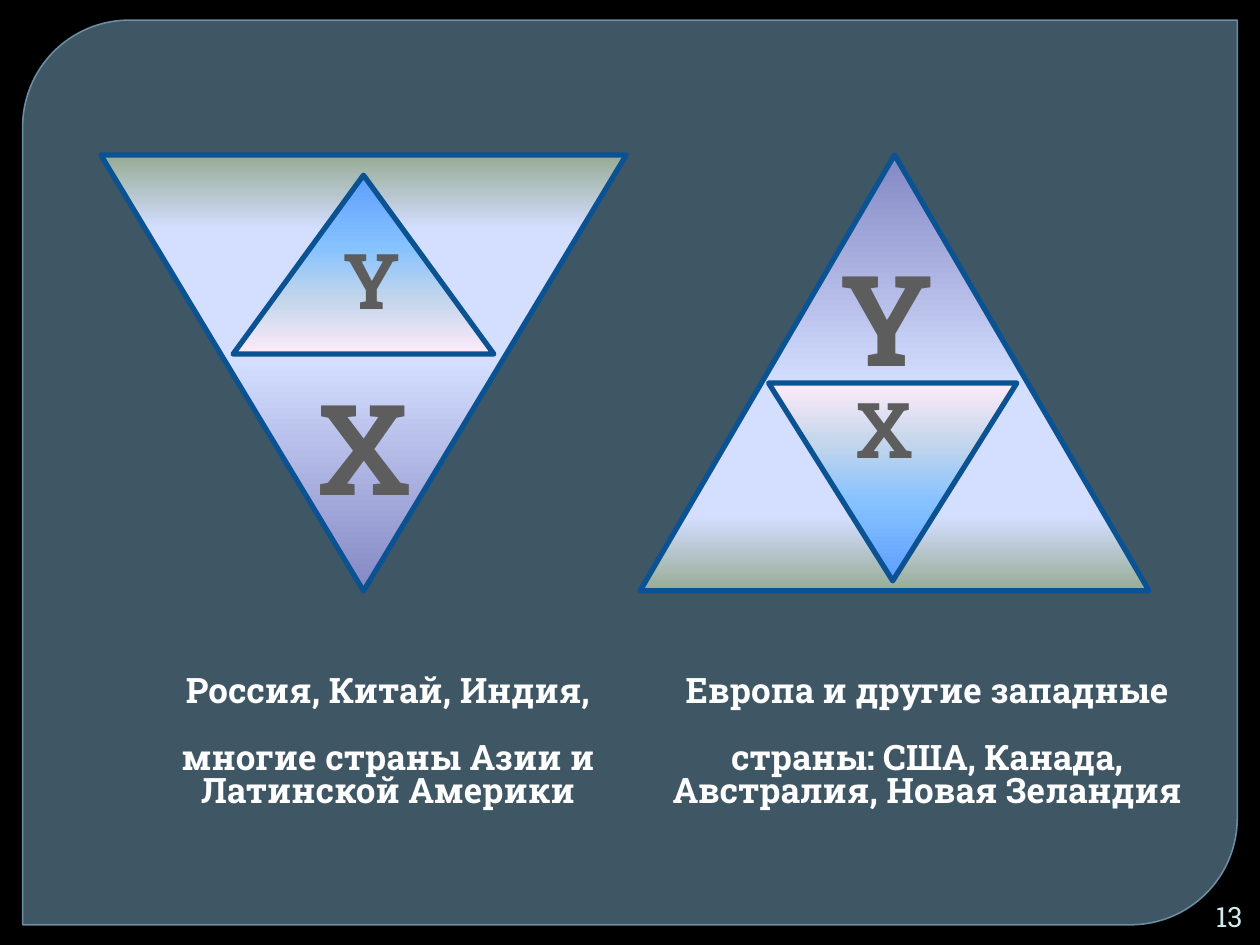
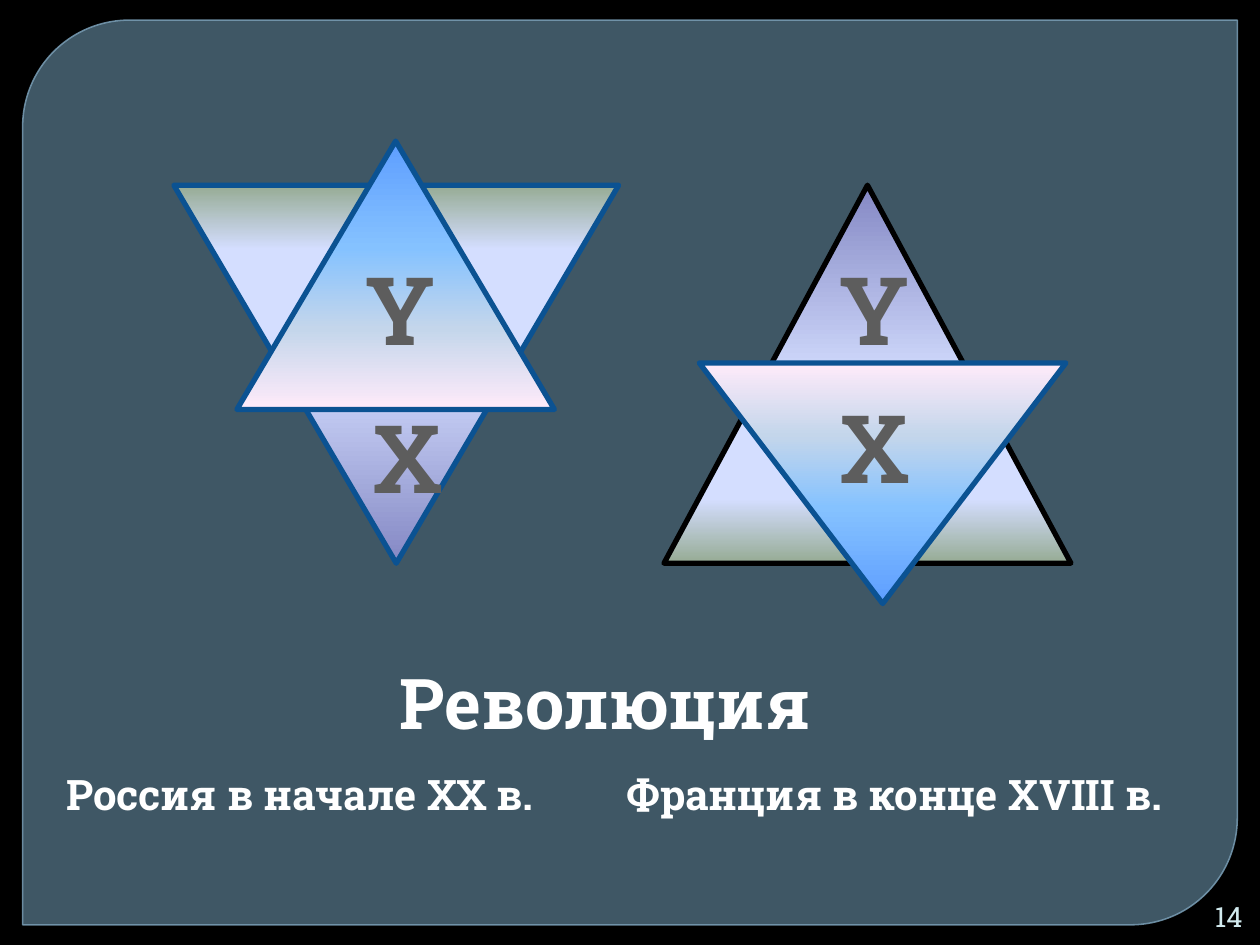
"""Build two slides comparing social pyramids as pairs of overlapping triangles."""
import pptx
import pptx.dml.color
import pptx.enum.shapes
import pptx.enum.text
import pptx.oxml
import pptx.oxml.ns
import pptx.util
from lxml import etree

Inches = pptx.util.Inches
Pt = pptx.util.Pt
SHAPE = pptx.enum.shapes.MSO_SHAPE
ALIGN = pptx.enum.text.PP_ALIGN
ANCHOR = pptx.enum.text.MSO_ANCHOR

FONT = "Roboto Slab"
BLACK, WHITE, BLUE = "000000", "FFFFFF", "0B5292"
LETTER, NUMBER = "5D5D5D", "D1EAEE"
PANEL, PANEL_EDGE = "61869C", "779BB2"
OUTER = [(0, "8488C4"), (53, "D4DEFF"), (83, "D4DEFF"), (100, "96AB94")]
INNER = [(0, "5E9EFF"), (40, "85C2FF"), (70, "C4D6EB"), (100, "FFEBFA")]
UP, DOWN = 0, 180

# triangles: box, rotation, gradient, edge; letters: text, centre x, top, size
# captions: lines, centre x, top, width, size, line spacing, gap after first line
SLIDES = [
    {
        "number": "13",
        "triangles": [
            ((0.8, 1.23, 4.17, 3.46), DOWN, OUTER, BLUE),
            ((1.85, 1.39, 2.07, 1.42), UP, INNER, BLUE),
            ((5.08, 1.23, 4.04, 3.46), UP, OUTER, BLUE),
            ((6.1, 3.04, 1.97, 1.57), DOWN, INNER, BLUE),
        ],
        "letters": [
            ("Y", 7.04, 1.86, 72),
            ("Х", 2.88, 2.88, 72),
            ("Y", 2.95, 1.8, 44),
            ("X", 7.02, 2.98, 44),
        ],
        "captions": [
            (["Россия, Китай, Индия,", "многие страны Азии и", "Латинской Америки"],
             3.08, 5.32, 4, 20, 0.8, 19),
            (["Европа и другие западные", "страны: США, Канада,",
              "Австралия, Новая Зеландия"],
             7.36, 5.32, 4.5, 20, 0.8, 19),
        ],
    },
    {
        "number": "14",
        "triangles": [
            ((1.38, 1.47, 3.53, 3), DOWN, OUTER, BLUE),
            ((5.27, 1.47, 3.23, 3), UP, OUTER, BLACK),
            ((1.88, 1.12, 2.52, 2.13), UP, INNER, BLUE),
            ((5.55, 2.88, 2.91, 1.91), DOWN, INNER, BLUE),
        ],
        "letters": [
            ("X", 3.24, 3.12, 54),
            ("Y", 6.94, 1.94, 54),
            ("Y", 3.18, 1.94, 54),
            ("X", 6.95, 3.04, 54),
        ],
        "captions": [
            (["Революция"], 4.8, 4.85, 9, 40, 1.5, 0),
            (["Россия в начале ХХ в."], 2.38, 5.85, 4.4, 24, 1.5, 0),
            (["Франция в конце XVIII в."], 7.1, 5.85, 4.8, 24, 1.5, 0),
        ],
    },
]


def rgb(color):
    return pptx.dml.color.RGBColor.from_string(color)


def set_alpha(sp, *percents):
    colors = sp._element.spPr.iter(pptx.oxml.ns.qn("a:srgbClr"))
    for color, percent in zip(colors, percents):
        alpha = etree.SubElement(color, pptx.oxml.ns.qn("a:alpha"))
        alpha.set("val", str(percent * 1000))


def set_gradient(sp, stops):
    items = "".join(
        f'<a:gs pos="{pos * 1000}"><a:srgbClr val="{color}"/></a:gs>'
        for pos, color in stops)
    grad = pptx.oxml.parse_xml(
        f'<a:gradFill {pptx.oxml.ns.nsdecls("a")} rotWithShape="1">'
        f'<a:gsLst>{items}</a:gsLst><a:lin ang="5400000" scaled="0"/></a:gradFill>')
    sp._element.spPr.find(pptx.oxml.ns.qn("a:prstGeom")).addnext(grad)


def add_shape(slide, kind, box, edge, width):
    sp = slide.shapes.add_shape(kind, *map(Inches, box))
    sp.shadow.inherit = False
    sp.line.color.rgb = rgb(edge)
    sp.line.width = Pt(width)
    return sp


def add_panel(slide):
    sp = add_shape(slide, SHAPE.ROUND_2_DIAG_RECTANGLE, (0.18, 0.16, 9.64, 7.18),
                   PANEL_EDGE, 0.87)
    sp.adjustments[0], sp.adjustments[1] = 0.118, 0
    sp.fill.solid()
    sp.fill.fore_color.rgb = rgb(PANEL)
    set_alpha(sp, 65, 88)


def add_triangle(slide, box, rotation, stops, edge):
    sp = add_shape(slide, SHAPE.ISOSCELES_TRIANGLE, box, edge, 3)
    sp.rotation = rotation
    set_gradient(sp, stops)


def add_text(slide, box, lines, size, color, bold=True, align=ALIGN.CENTER,
             spacing=1.0, gap=0):
    tf = slide.shapes.add_textbox(*map(Inches, box)).text_frame
    tf.word_wrap = True
    tf.text = "\n".join(lines)
    for p in tf.paragraphs:
        p.alignment = align
        p.line_spacing = spacing
        for r in p.runs:
            r.font.name, r.font.size, r.font.bold = FONT, Pt(size), bold
            r.font.color.rgb = rgb(color)
    if gap:
        tf.paragraphs[0].space_after = Pt(gap)
    return tf


def text_height(lines, size, spacing, gap=0):
    return 0.1 + (len(lines) * size * 1.2 * spacing + gap) / 72


def build_slide(prs, content):
    slide = prs.slides.add_slide(prs.slide_layouts[6])
    slide.background.fill.solid()
    slide.background.fill.fore_color.rgb = rgb(BLACK)
    add_panel(slide)
    for triangle in content["triangles"]:
        add_triangle(slide, *triangle)
    for letter, center, top, size in content["letters"]:
        width = 1.4
        box = (center - width / 2, top, width, text_height([letter], size, 1))
        add_text(slide, box, [letter], size, LETTER)
    for lines, center, top, width, size, spacing, gap in content["captions"]:
        box = (center - width / 2, top, width, text_height(lines, size, spacing, gap))
        add_text(slide, box, lines, size, WHITE, spacing=spacing, gap=gap)
    tf = add_text(slide, (9.45, 7.12, 0.51, 0.3), [content["number"]], 16, NUMBER,
                  bold=False, align=ALIGN.RIGHT)
    tf.vertical_anchor = ANCHOR.MIDDLE


def main():
    prs = pptx.Presentation()
    prs.slide_width, prs.slide_height = Inches(10), Inches(7.5)
    for content in SLIDES:
        build_slide(prs, content)
    prs.save("out.pptx")


if __name__ == "__main__":
    main()
